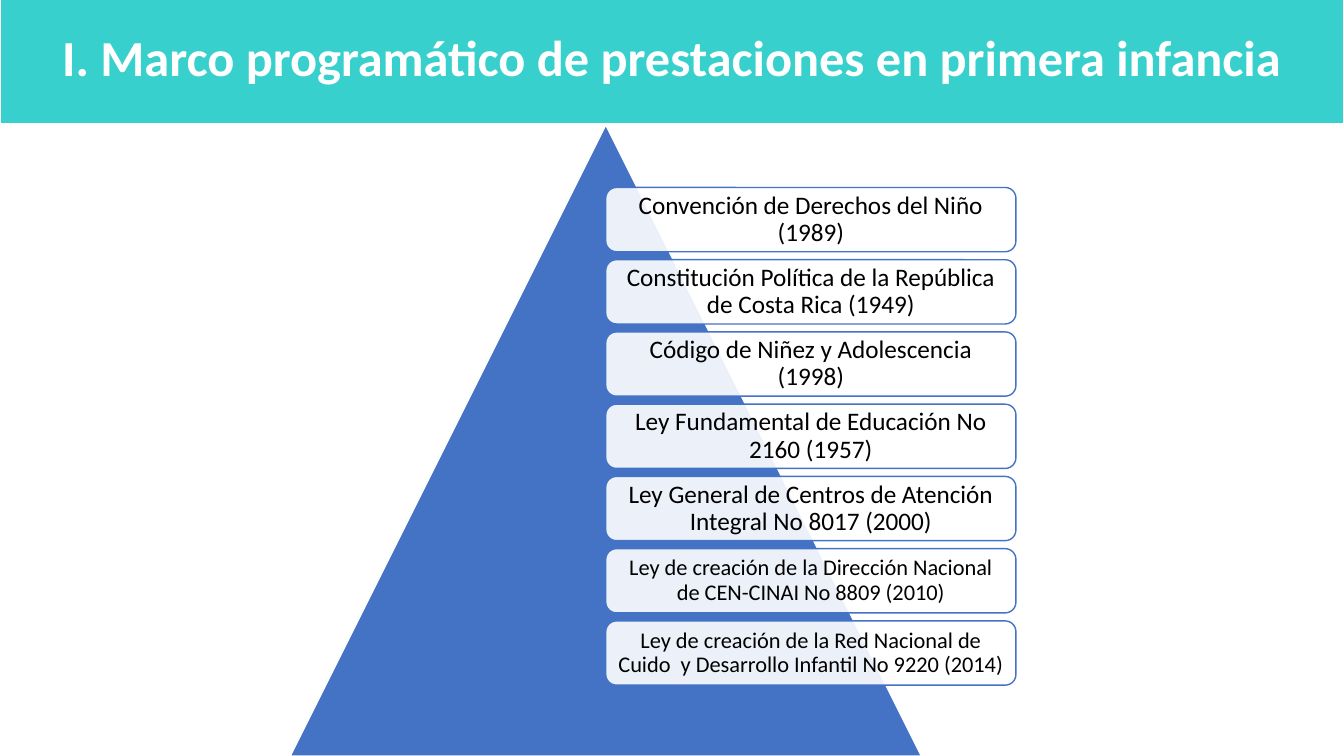
from lxml.etree import SubElement
from pptx import Presentation
from pptx.dml.color import RGBColor
from pptx.enum.shapes import MSO_SHAPE
from pptx.enum.text import MSO_ANCHOR, MSO_AUTO_SIZE, PP_ALIGN
from pptx.oxml.ns import qn
from pptx.util import Pt

TEAL = RGBColor(0x38, 0xD0, 0xCC)
BLUE = RGBColor(0x44, 0x72, 0xC4)
WHITE = RGBColor(0xFF, 0xFF, 0xFF)
BLACK = RGBColor(0, 0, 0)

LAWS = [
    ("Convención de Derechos del Niño (1989)", 18),
    ("Constitución Política de la República de Costa Rica (1949)", 18),
    ("Código de Niñez y Adolescencia (1998)", 18),
    ("Ley Fundamental de Educación No 2160 (1957)", 18),
    ("Ley General de Centros de Atención Integral No 8017 (2000)", 18),
    ("Ley de creación de la Dirección Nacional de CEN-CINAI No 8809 (2010)", 16),
    ("Ley de creación de la Red Nacional de Cuido  y Desarrollo Infantil No 9220 (2014)", 16),
]
TOP = 133.9
STEP = 51.6


def paint(shape, fill, line):
    shape.fill.solid()
    shape.fill.fore_color.rgb = fill
    shape.line.color.rgb = line
    shape.line.width = Pt(1)


def write(shape, text, size, color, bold):
    frame = shape.text_frame
    frame.text = text
    frame.word_wrap = True
    frame.auto_size = MSO_AUTO_SIZE.NONE
    frame.vertical_anchor = MSO_ANCHOR.MIDDLE
    par = frame.paragraphs[0]
    par.alignment = PP_ALIGN.CENTER
    font = par.runs[0].font
    font.name = "Calibri"
    font.size = Pt(size)
    font.bold = bold
    font.color.rgb = color


deck = Presentation()
deck.slide_width = Pt(960)
deck.slide_height = Pt(540)
slide = deck.slides.add_slide(deck.slide_layouts[5])
shapes = slide.shapes

title = shapes.title
title.left, title.top = Pt(0), Pt(-8)
title.width, title.height = Pt(960), Pt(96.5)
paint(title, TEAL, WHITE)
write(title, "I. Marco programático de prestaciones en primera infancia", 36, WHITE, True)

peak = shapes.add_shape(MSO_SHAPE.ISOSCELES_TRIANGLE, Pt(207.4), Pt(89.3), Pt(450.7), Pt(450.7))
peak.shadow.inherit = False
paint(peak, BLUE, WHITE)

for row, (law, size) in enumerate(LAWS):
    box = shapes.add_shape(
        MSO_SHAPE.ROUNDED_RECTANGLE, Pt(432.7), Pt(TOP + row * STEP), Pt(293), Pt(45.9)
    )
    box.shadow.inherit = False
    paint(box, WHITE, BLUE)
    tint = box.fill._xPr.find(qn("a:solidFill"))[0]
    SubElement(tint, qn("a:alpha"), val="90000")
    write(box, law, size, BLACK, False)
    frame = box.text_frame
    frame.margin_left = frame.margin_right = Pt(5)
    frame.margin_top = frame.margin_bottom = Pt(5)
    frame.paragraphs[0].line_spacing = 0.9

deck.save("out.pptx")
